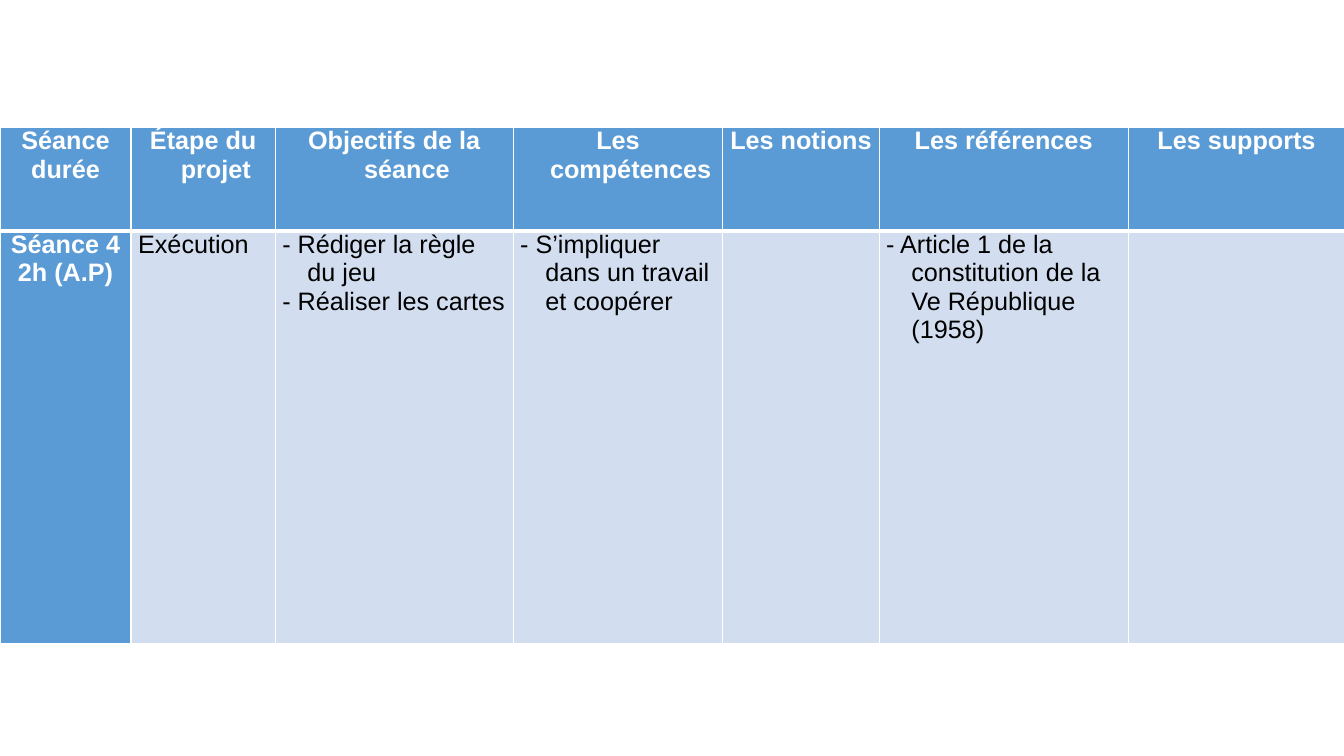
from lxml import etree
from pptx import Presentation
from pptx.dml.color import RGBColor
from pptx.enum.text import PP_ALIGN
from pptx.oxml.ns import qn
from pptx.util import Inches, Pt

CENTER, LEFT = PP_ALIGN.CENTER, PP_ALIGN.LEFT
BLUE, PALE, WHITE, BLACK = "5B9BD5", "D2DEEF", "FFFFFF", "000000"

COL_WIDTHS = [1.3, 1.43, 2.36, 2.08, 1.55, 2.47, 2.15]
ROW_HEIGHTS = [1.03, 4.1]
# Each line of a cell is one paragraph
ROWS = [
    ["Séance\ndurée", "Étape du projet", "Objectifs de la séance",
     "Les compétences", "Les notions", "Les références", "Les supports"],
    ["Séance 4\n2h (A.P)", "Exécution",
     "- Rédiger la règle du jeu\n- Réaliser les cartes",
     "- S’impliquer dans un travail et coopérer", "",
     "- Article 1 de la constitution de la Ve République (1958)", ""],
]


def rgb(color):
    return RGBColor.from_string(color)


def write_text(tf, text, size=18, color=BLACK, bold=False, align=LEFT, hanging=0.25):
    for i, line in enumerate(text.split("\n")):
        p = tf.paragraphs[0] if i == 0 else tf.add_paragraph()
        p.alignment = align
        p.font.size = Pt(size)
        pPr = p._p.get_or_add_pPr()
        pPr.set("marL", str(Inches(hanging)))
        pPr.set("indent", str(-Inches(hanging)))
        if line:
            r = p.add_run()
            r.text = line
            r.font.name = "Arial"
            r.font.size = Pt(size)
            r.font.bold = bold
            r.font.color.rgb = rgb(color)


def set_borders(cell, **widths):
    tcPr = cell._tc.get_or_add_tcPr()
    for side, width in widths.items():
        ln = etree.SubElement(tcPr, qn(f"a:ln{side}"), w=str(Pt(width)))
        fill = etree.SubElement(ln, qn("a:solidFill"))
        etree.SubElement(fill, qn("a:srgbClr"), val=WHITE)


def style_cell(cell, text, is_header, is_heading):
    cell.margin_left = cell.margin_right = Inches(0.07)
    cell.margin_top = cell.margin_bottom = 0
    # The rule under the header row is thicker than the others
    set_borders(cell, L=1, R=1, T=1 if is_header else 3, B=3 if is_header else 1)
    cell.fill.solid()
    cell.fill.fore_color.rgb = rgb(BLUE if is_heading else PALE)
    write_text(cell.text_frame, text, bold=is_heading,
               color=WHITE if is_heading else BLACK,
               align=CENTER if is_heading else LEFT)


def add_session_table(s, left, top):
    table = s.shapes.add_table(
        len(ROWS), len(COL_WIDTHS), Inches(left), Inches(top),
        Inches(sum(COL_WIDTHS)), Inches(sum(ROW_HEIGHTS))).table
    for column, width in zip(table.columns, COL_WIDTHS):
        column.width = Inches(width)
    for row, height in zip(table.rows, ROW_HEIGHTS):
        row.height = Inches(height)
    for i, texts in enumerate(ROWS):
        for j, text in enumerate(texts):
            style_cell(table.cell(i, j), text, i == 0, i == 0 or j == 0)


def main():
    prs = Presentation()
    prs.slide_width, prs.slide_height = Inches(13.33), Inches(7.5)
    s = prs.slides.add_slide(prs.slide_layouts[6])
    # Session plan
    add_session_table(s, 0, 1.26)
    prs.save("out.pptx")


if __name__ == "__main__":
    main()
